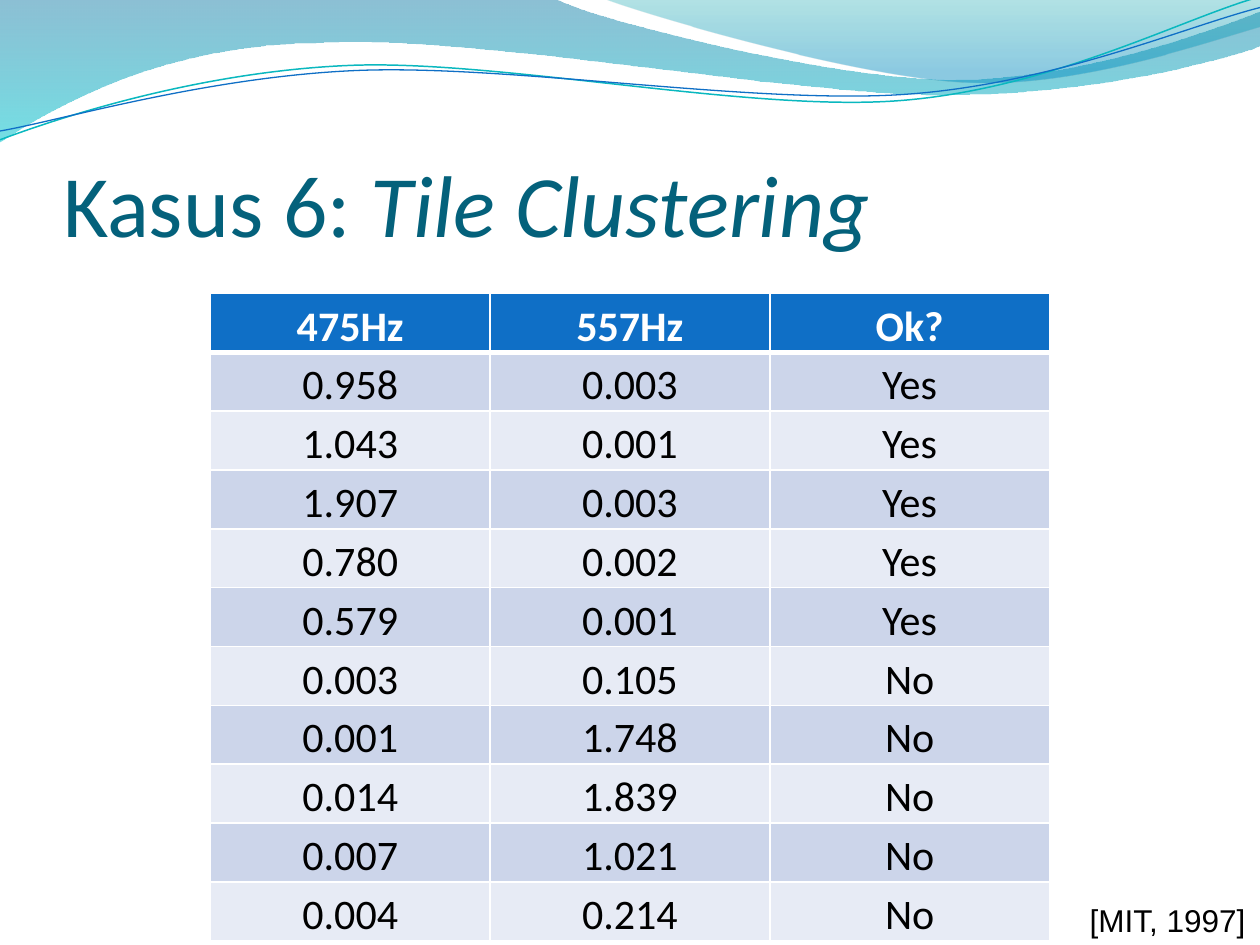
from dataclasses import dataclass

from lxml.etree import SubElement
from pptx import Presentation
from pptx.dml.color import RGBColor
from pptx.enum.text import MSO_ANCHOR, MSO_AUTO_SIZE, PP_ALIGN
from pptx.oxml import parse_xml
from pptx.oxml.ns import nsdecls, qn
from pptx.util import Inches, Pt


@dataclass(frozen=True)
class Theme:
    title_color: str = "04617B"
    text_color: str = "000000"
    header_text: str = "FFFFFF"
    header_fill: str = "0F6FC6"
    band_fills: tuple = ("CCD5EA", "E7EBF5")
    border: str = "FFFFFF"
    teal_line: str = "0AB8BF"
    blue_line: str = "0F6FC6"
    wide_wave: tuple = ((0, "0074A1", 45), (100, "00C6CF", 55))
    right_wave: tuple = ((0, "00A1A9", 30), (80, "008BBF", 45))
    font: str = "Calibri"
    citation_font: str = "Arial"
    title_size: int = 50
    table_size: int = 24
    citation_size: int = 18


class SlideBuilder:
    def __init__(self, slide, theme):
        self.slide = slide
        self.theme = theme

    def outline(self, start, segments, closed):
        corners = [(Inches(x), Inches(y)) for segment in segments
                   for x, y in zip(segment[::2], segment[1::2])]
        builder = self.slide.shapes.build_freeform(
            Inches(start[0]), Inches(start[1]), scale=1.0)
        builder.add_line_segments(corners, close=closed)
        shape = builder.convert_to_shape()
        shape.shadow.inherit = False
        lines = iter(list(shape.element.iter(qn("a:lnTo"))))
        for segment in segments:
            first = next(lines)
            if len(segment) == 6:
                curve = parse_xml(f'<a:cubicBezTo {nsdecls("a")}/>')
                first.addprevious(curve)
                for line in (first, next(lines), next(lines)):
                    curve.append(line[0])
                    line.getparent().remove(line)
        return shape

    def wave(self, start, segments, stops):
        shape = self.outline(start, segments, True)
        shape.line.fill.background()
        shape.fill.gradient()
        shape.fill.gradient_angle = 270
        for stop, (position, color, _) in zip(shape.fill.gradient_stops, stops):
            stop.position = position / 100
            stop.color.rgb = RGBColor.from_string(color)
        colors = shape.element.spPr.iter(qn("a:srgbClr"))
        for color, (_, _, opacity) in zip(colors, stops):
            SubElement(color, qn("a:alpha")).set("val", str(opacity * 1000))

    def wave_line(self, start, segments, color, width):
        shape = self.outline(start, segments, False)
        shape.fill.background()
        shape.line.color.rgb = RGBColor.from_string(color)
        shape.line.width = Pt(width)

    def run(self, paragraph, text, size, color, font, bold=False, italic=False):
        run = paragraph.add_run()
        run.text = text
        run.font.name = font
        run.font.size = Pt(size)
        run.font.bold = bold
        run.font.italic = italic
        run.font.color.rgb = RGBColor.from_string(color)

    def title(self, plain, italic):
        theme = self.theme
        shape = self.slide.shapes.add_textbox(
            Inches(0.5), Inches(0.77), Inches(9.08), Inches(1.25))
        frame = shape.text_frame
        frame.word_wrap = True
        frame.vertical_anchor = MSO_ANCHOR.BOTTOM
        frame.margin_left = frame.margin_right = frame.margin_bottom = 0
        frame.margin_top = Inches(0.05)
        paragraph = frame.paragraphs[0]
        for text, slanted in ((plain, False), (italic, True)):
            self.run(paragraph, text, theme.title_size, theme.title_color,
                     theme.font, italic=slanted)

    def citation(self, text):
        theme = self.theme
        shape = self.slide.shapes.add_textbox(
            Inches(8.55), Inches(7.1), Inches(1.45), Inches(0.4))
        frame = shape.text_frame
        frame.word_wrap = False
        frame.auto_size = MSO_AUTO_SIZE.SHAPE_TO_FIT_TEXT
        self.run(frame.paragraphs[0], text, theme.citation_size,
                 theme.text_color, theme.citation_font)

    def borders(self, cell, top, bottom):
        properties = cell._tc.get_or_add_tcPr()
        widths = {"lnL": 1, "lnR": 1, "lnT": top, "lnB": bottom}
        for index, (side, width) in enumerate(widths.items()):
            properties.insert(index, parse_xml(
                f'<a:{side} {nsdecls("a")} w="{Pt(width)}"><a:solidFill>'
                f'<a:srgbClr val="{self.theme.border}"/></a:solidFill></a:{side}>'))

    def cell(self, cell, text, row):
        theme = self.theme
        header = row == 0
        fill = theme.header_fill if header else theme.band_fills[(row - 1) % 2]
        cell.fill.solid()
        cell.fill.fore_color.rgb = RGBColor.from_string(fill)
        cell.margin_left = cell.margin_right = Inches(0.07)
        cell.margin_top = cell.margin_bottom = 0
        self.borders(cell, 3 if row == 1 else 1, 3 if header else 1)
        paragraph = cell.text_frame.paragraphs[0]
        paragraph.alignment = PP_ALIGN.CENTER
        paragraph.line_spacing = 1.15
        color = theme.header_text if header else theme.text_color
        self.run(paragraph, text, theme.table_size, color, theme.font, bold=header)

    def table(self, rows):
        height = Inches(5.14)
        table = self.slide.shapes.add_table(
            len(rows), len(rows[0]), Inches(1.67), Inches(2.33),
            Inches(6.66), height).table
        for index, values in enumerate(rows):
            table.rows[index].height = height // len(rows)
            for column, text in enumerate(values):
                self.cell(table.cell(index, column), text, index)


def main():
    presentation = Presentation()
    presentation.slide_width = Inches(10)
    presentation.slide_height = Inches(7.5)
    slide = presentation.slides.add_slide(presentation.slide_layouts[6])
    theme = Theme()
    builder = SlideBuilder(slide, theme)

    builder.wave((0, -0.01), [
        (4.4, -0.01),
        (4.76, 0.17, 6.64, 0.63, 7.58, 0.63),
        (8.53, 0.63, 9.58, 0.26, 10, 0.09),
        (10.01, 0.36),
        (9.83, 0.44, 8.7, 0.76, 7.46, 0.75),
        (6.22, 0.75, 3.82, 0.28, 2.57, 0.34),
        (1.29, 0.35, 0.46, 0.83, -0.01, 1.13),
        (0, -0.01)], theme.wide_wave)
    builder.wave((4.79, -0.01), [
        (5.09, 0.11, 6.82, 0.62, 7.69, 0.65),
        (8.56, 0.69, 9.61, 0.32, 10, 0.21),
        (10, 0),
        (4.79, -0.01)], theme.right_wave)
    builder.wave_line((0, 1.11), [
        (0.48, 0.93, 1.58, 0.57, 2.77, 0.52),
        (3.95, 0.47, 5.93, 0.89, 7.13, 0.8),
        (8.33, 0.71, 9.38, 0.15, 9.98, -0.02)], theme.teal_line, 0.85)
    builder.wave_line((0, 1.04), [
        (0.47, 0.96, 1.64, 0.61, 2.83, 0.56),
        (4.03, 0.51, 5.97, 0.83, 7.17, 0.75),
        (8.36, 0.67, 9.41, 0.21, 10, 0.06)], theme.blue_line, 0.75)

    builder.title("Kasus 6: ", "Tile Clustering")
    builder.table([
        ("475Hz", "557Hz", "Ok?"),
        ("0.958", "0.003", "Yes"),
        ("1.043", "0.001", "Yes"),
        ("1.907", "0.003", "Yes"),
        ("0.780", "0.002", "Yes"),
        ("0.579", "0.001", "Yes"),
        ("0.003", "0.105", "No"),
        ("0.001", "1.748", "No"),
        ("0.014", "1.839", "No"),
        ("0.007", "1.021", "No"),
        ("0.004", "0.214", "No"),
    ])
    builder.citation("[MIT, 1997]")
    presentation.save("out.pptx")


if __name__ == "__main__":
    main()
